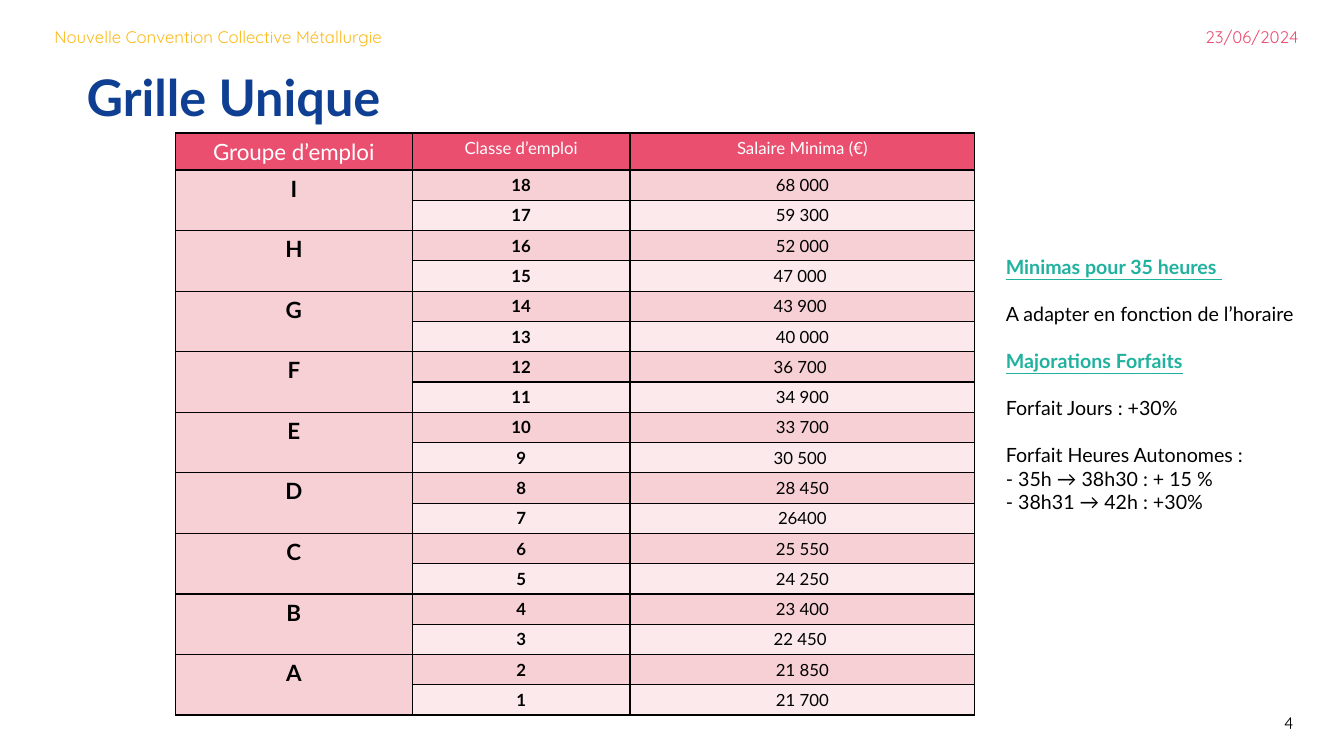
"""Build the slide showing the single pay grid of the metalworking agreement."""
import lxml.etree
import pptx
import pptx.dml.color
import pptx.enum.text
import pptx.oxml.ns
import pptx.util

COLORS = {
    "title": "0F3F93", "yellow": "FBBB1D", "pink": "EA4F70", "green": "20B29E",
    "black": "000000", "white": "FFFFFF", "rose": "F7D0D5", "pale": "FBE9EB",
}
LEFT = pptx.enum.text.PP_ALIGN.LEFT
CENTER = pptx.enum.text.PP_ALIGN.CENTER
RIGHT = pptx.enum.text.PP_ALIGN.RIGHT

presentation = pptx.Presentation()
presentation.slide_width = pptx.util.Inches(13.33)
presentation.slide_height = pptx.util.Inches(7.5)
column_unit = presentation.slide_width / 100
row_unit = presentation.slide_height / 100
slide = presentation.slides.add_slide(presentation.slide_layouts[6])


def add_frame(left, top, width, height, margins=True):
    """Add a wrapping text box placed in hundredths of the slide."""
    shape = slide.shapes.add_textbox(
        int(left * column_unit), int(top * row_unit),
        int(width * column_unit), int(height * row_unit))
    frame = shape.text_frame
    frame.word_wrap = True
    if not margins:
        frame.margin_left = frame.margin_right = 0
        frame.margin_top = frame.margin_bottom = 0
    return frame


def add_text(paragraph, text, size, color, font="Lato", bold=False, align=LEFT):
    """Add one styled run to a paragraph and return it."""
    paragraph.alignment = align
    run = paragraph.add_run()
    run.text = text
    run.font.name = font
    run.font.size = pptx.util.Pt(size)
    run.font.bold = bold
    run.font.color.rgb = pptx.dml.color.RGBColor.from_string(COLORS[color])
    return run


title = add_frame(6.45, 6.53, 86.55, 32.93, margins=False).paragraphs[0]
title.line_spacing = pptx.util.Pt(55)
add_text(title, "Grille Unique", 36, "title", bold=True)

header = add_frame(4.05, 3.6, 46.88, 2.93, margins=False).paragraphs[0]
add_text(header, "Nouvelle Convention Collective Métallurgie", 12, "yellow", "Quicksand")
date = add_frame(76.5, 2.93, 20.85, 5.33).paragraphs[0]
add_text(date, "23/06/2024", 12, "pink", "Quicksand", align=RIGHT)
page_number = add_frame(90.15, 93.6, 6.82, 3.6).paragraphs[0]
add_text(page_number, "4", 12, "black", "Quicksand", align=RIGHT)

headings = ["Groupe d’emploi", "Classe d’emploi", "Salaire Minima (€)"]
groups = "IHGFEDCBA"
salaries = [
    "68 000", "59 300", "52 000", "47 000 ", "43 900 ", "40 000",
    "36 700 ", "34 900", "33 700", "30 500 ", "28 450", "26400",
    "25 550", "24 250", "23 400", "22 450 ", "21 850", "21 700",
]
column_widths = [17.63, 16.2, 25.65]
row_heights = [4.89] + [4] * len(salaries)

table = slide.shapes.add_table(
    len(row_heights), len(column_widths),
    int(13.05 * column_unit), int(17.6 * row_unit),
    int(sum(column_widths) * column_unit), int(sum(row_heights) * row_unit)).table
table.first_row = table.horz_banding = False
for column, width in zip(table.columns, column_widths):
    column.width = int(width * column_unit)
for row, height in zip(table.rows, row_heights):
    row.height = int(height * row_unit)

for row_index, row in enumerate(table.rows):
    for column_index, cell in enumerate(row.cells):
        properties = cell._tc.get_or_add_tcPr()
        for side in ("lnL", "lnR", "lnT", "lnB"):
            line = lxml.etree.SubElement(
                properties, pptx.oxml.ns.qn(f"a:{side}"), w=str(pptx.util.Pt(1)))
            fill = lxml.etree.SubElement(line, pptx.oxml.ns.qn("a:solidFill"))
            lxml.etree.SubElement(
                fill, pptx.oxml.ns.qn("a:srgbClr"), val=COLORS["black"])
        if row_index == 0:
            cell_color = "pink"
        elif column_index == 0 or row_index % 2:
            cell_color = "rose"
        else:
            cell_color = "pale"
        cell.fill.solid()
        cell.fill.fore_color.rgb = pptx.dml.color.RGBColor.from_string(COLORS[cell_color])

for column_index, heading in enumerate(headings):
    add_text(table.cell(0, column_index).text_frame.paragraphs[0], heading,
             12 if column_index else 16, "white", align=CENTER)
for group_index, group in enumerate(groups):
    first = 2 * group_index + 1
    table.cell(first, 0).merge(table.cell(first + 1, 0))
    add_text(table.cell(first, 0).text_frame.paragraphs[0], group,
             16, "black", bold=True, align=CENTER)
for row_index, salary in enumerate(salaries, 1):
    job_class = str(len(salaries) + 1 - row_index)
    add_text(table.cell(row_index, 1).text_frame.paragraphs[0], job_class,
             12, "black", bold=True, align=CENTER)
    add_text(table.cell(row_index, 2).text_frame.paragraphs[0], salary,
             12, "black", align=CENTER)

notes = [
    ("Minimas pour 35 heures ", True, 0),
    ("A adapter en fonction de l’horaire", False, 16.8),
    ("Majorations Forfaits", True, 16.8),
    ("Forfait Jours : +30%", False, 16.8),
    ("Forfait Heures Autonomes :", False, 16.8),
    ("- 35h → 38h30 : + 15 %", False, 0),
    ("- 38h31 → 42h : +30%", False, 0),
]
notes_frame = add_frame(74.1, 33.07, 25.65, 43.07)
for index, (text, is_heading, gap) in enumerate(notes):
    paragraph = notes_frame.add_paragraph() if index else notes_frame.paragraphs[0]
    if gap:
        paragraph.space_before = pptx.util.Pt(gap)
    run = add_text(paragraph, text, 14, "green" if is_heading else "black", bold=is_heading)
    run.font.underline = is_heading

presentation.save("out.pptx")
